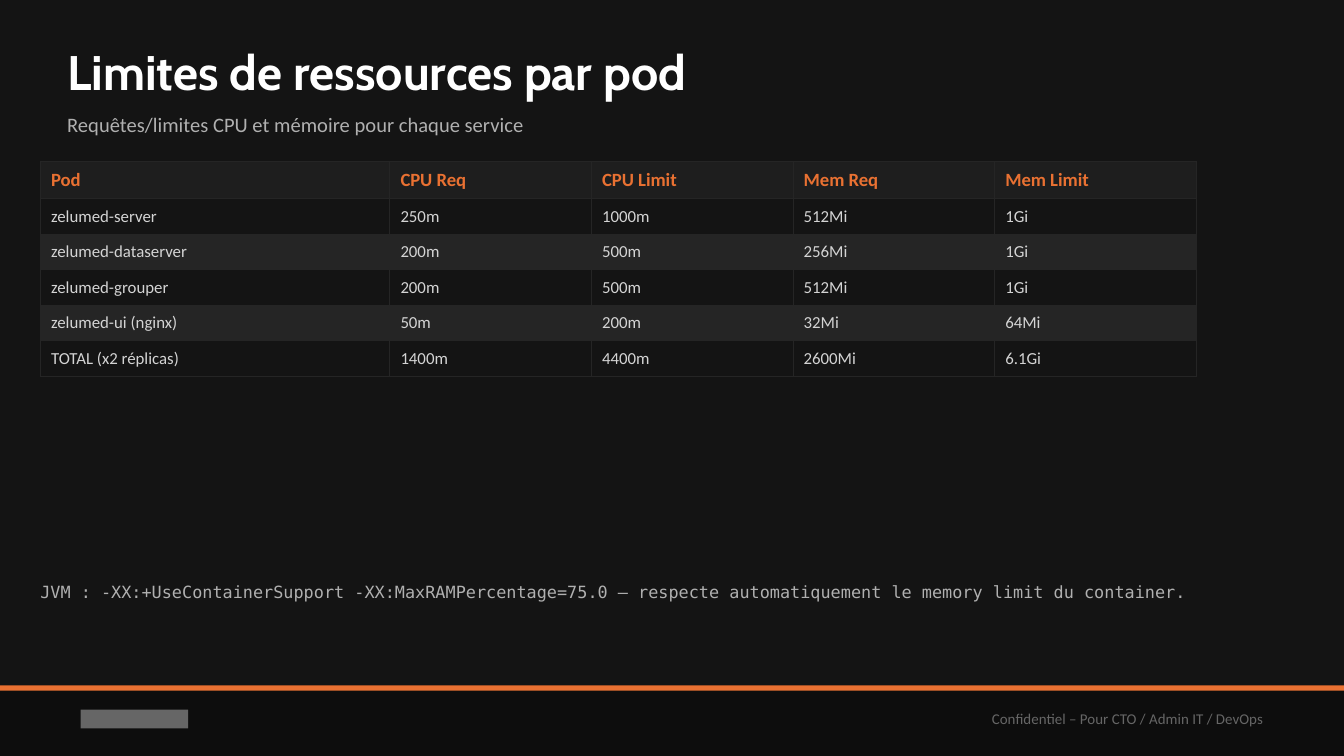
from dataclasses import dataclass
from typing import NamedTuple

from lxml import etree
from pptx import Presentation
from pptx import util as u
from pptx.dml.color import RGBColor
from pptx.enum import shapes, text
from pptx.oxml.ns import qn


@dataclass(frozen=True)
class Theme:
    background: str = "141414"
    footer: str = "0D0D0D"
    accent: str = "E97132"
    white: str = "FFFFFF"
    muted: str = "B0B0B0"
    faint: str = "666666"
    body: str = "D4D4D4"
    header: str = "1E1E1E"
    stripe: str = "252525"
    heading_font: str = "Cabin"
    body_font: str = "Calibri"
    code_font: str = "DejaVu Sans Mono"
    title_size: float = 26
    subtitle_size: float = 11
    header_size: float = 10
    body_size: float = 9
    footer_size: float = 8


class Area(NamedTuple):
    left: float
    top: float
    width: float
    height: float

    def lengths(self) -> list[u.Length]:
        return [u.Inches(value) for value in self]


THEME = Theme()
WIDTH = 10
HEIGHT = WIDTH * 9 / 16
FOOTER_TOP = 5.1
COLUMNS = (2.6, 1.5, 1.5, 1.5, 1.5)
HEADER_HEIGHT = 0.28
TABLE_HEIGHT = 1.6
ROWS = (
    ("Pod", "CPU Req", "CPU Limit", "Mem Req", "Mem Limit"),
    ("zelumed-server", "250m", "1000m", "512Mi", "1Gi"),
    ("zelumed-dataserver", "200m", "500m", "256Mi", "1Gi"),
    ("zelumed-grouper", "200m", "500m", "512Mi", "1Gi"),
    ("zelumed-ui (nginx)", "50m", "200m", "32Mi", "64Mi"),
    ("TOTAL (x2 réplicas)", "1400m", "4400m", "2600Mi", "6.1Gi"),
)


def paint(fill, color: str) -> None:
    fill.solid()
    fill.fore_color.rgb = RGBColor.from_string(color)


def add_span(para, words: str, *, size: float, color: str,
             font: str = THEME.body_font, bold: bool = False) -> None:
    span = para.add_run()
    span.text = words
    span.font.name = font
    span.font.size = u.Pt(size)
    span.font.bold = bold
    span.font.color.rgb = RGBColor.from_string(color)


def add_box(slide, area: Area, *, inset: bool = False, align=text.PP_ALIGN.LEFT):
    frame = slide.shapes.add_textbox(*area.lengths()).text_frame
    frame.word_wrap = True
    frame.vertical_anchor = text.MSO_ANCHOR.MIDDLE
    if not inset:
        frame.margin_left = frame.margin_right = u.Inches(0)
        frame.margin_top = frame.margin_bottom = u.Inches(0)
    para = frame.paragraphs[0]
    para.alignment = align
    return para


def add_band(slide, area: Area, color: str) -> None:
    band = slide.shapes.add_shape(shapes.MSO_SHAPE.RECTANGLE, *area.lengths())
    band.shadow.inherit = False
    paint(band.fill, color)
    band.line.fill.background()


def add_borders(cell, color: str, width: float) -> None:
    properties = cell._tc.get_or_add_tcPr()
    for side in ("lnL", "lnR", "lnT", "lnB"):
        line = etree.SubElement(properties, qn(f"a:{side}"), w=str(u.Pt(width)))
        solid = etree.SubElement(line, qn("a:solidFill"))
        etree.SubElement(solid, qn("a:srgbClr"), val=color)


def fill_cell(cell, words: str, fill: str, **style) -> None:
    cell.margin_left = cell.margin_right = u.Inches(0.08)
    cell.margin_top = cell.margin_bottom = u.Inches(0.05)
    cell.vertical_anchor = text.MSO_ANCHOR.MIDDLE
    add_borders(cell, THEME.stripe, 0.5)
    paint(cell.fill, fill)
    add_span(cell.text_frame.paragraphs[0], words, **style)


def add_limits_table(slide) -> None:
    area = Area(0.3, 1.2, sum(COLUMNS), TABLE_HEIGHT)
    table = slide.shapes.add_table(len(ROWS), len(COLUMNS), *area.lengths()).table
    for column, width in zip(table.columns, COLUMNS):
        column.width = u.Inches(width)
    row_height = (TABLE_HEIGHT - HEADER_HEIGHT) / (len(ROWS) - 1)
    for index, values in enumerate(ROWS):
        if index == 0:
            height, fill = HEADER_HEIGHT, THEME.header
            style = dict(size=THEME.header_size, color=THEME.accent, bold=True)
        else:
            height = row_height
            fill = THEME.background if index % 2 else THEME.stripe
            style = dict(size=THEME.body_size, color=THEME.body)
        table.rows[index].height = u.Inches(height)
        for cell, words in zip(table.rows[index].cells, values):
            fill_cell(cell, words, fill, **style)


def add_footer(slide) -> None:
    add_band(slide, Area(0, FOOTER_TOP, WIDTH, HEIGHT - FOOTER_TOP), THEME.footer)
    add_band(slide, Area(0, FOOTER_TOP, WIDTH, 0.04), THEME.accent)
    add_band(slide, Area(0.6, 5.28, 0.8, 0.14), THEME.faint)
    notice = add_box(slide, Area(5.5, 5.15, 4, 0.4), inset=True,
                     align=text.PP_ALIGN.RIGHT)
    add_span(notice, "Confidentiel – Pour CTO / Admin IT / DevOps",
             size=THEME.footer_size, color=THEME.faint)


def main() -> None:
    deck = Presentation()
    deck.slide_width = u.Inches(WIDTH)
    deck.slide_height = u.Inches(HEIGHT)
    slide = deck.slides.add_slide(deck.slide_layouts[6])
    paint(slide.background.fill, THEME.background)
    add_footer(slide)
    add_span(add_box(slide, Area(0.5, 0.25, 9, 0.55)),
             "Limites de ressources par pod", size=THEME.title_size,
             color=THEME.white, font=THEME.heading_font, bold=True)
    add_span(add_box(slide, Area(0.5, 0.75, 9, 0.35)),
             "Requêtes/limites CPU et mémoire pour chaque service",
             size=THEME.subtitle_size, color=THEME.muted)
    add_limits_table(slide)
    add_span(add_box(slide, Area(0.3, 4.2, 9.4, 0.4)),
             "JVM : -XX:+UseContainerSupport -XX:MaxRAMPercentage=75.0 — "
             "respecte automatiquement le memory limit du container.",
             size=THEME.body_size, color=THEME.muted, font=THEME.code_font)
    deck.save("out.pptx")


if __name__ == "__main__":
    main()
